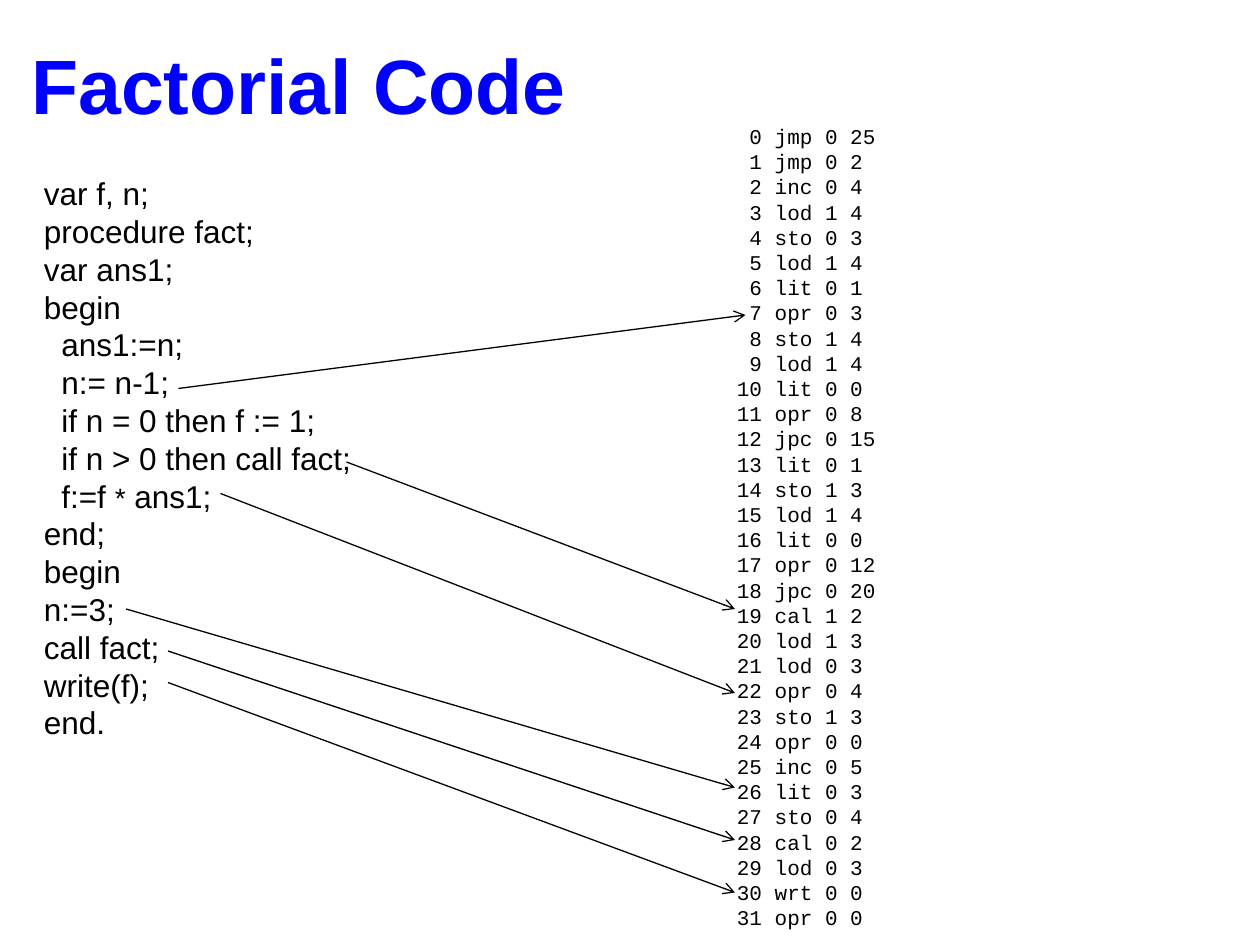
from dataclasses import dataclass

from lxml.etree import SubElement
from pptx import Presentation
from pptx.dml.color import RGBColor
from pptx.enum.shapes import MSO_CONNECTOR
from pptx.enum.text import MSO_AUTO_SIZE
from pptx.oxml.ns import qn
from pptx.slide import Slide
from pptx.util import Pt

COLORS = {"title": "0000FF", "ink": "000000", "background": "FFFFFF"}
INDENT = 10
STAR_SIZE = 16

PROGRAM = """var f, n;
procedure fact;
var ans1;
begin
  ans1:=n;
  n:= n-1;
  if n = 0 then f := 1;
  if n > 0 then call fact;
  f:=f * ans1;
end;
begin
n:=3;
call fact;
write(f);
end."""

INSTRUCTIONS = (
    "jmp 0 25", "jmp 0 2", "inc 0 4", "lod 1 4", "sto 0 3", "lod 1 4", "lit 0 1", "opr 0 3",
    "sto 1 4", "lod 1 4", "lit 0 0", "opr 0 8", "jpc 0 15", "lit 0 1", "sto 1 3", "lod 1 4",
    "lit 0 0", "opr 0 12", "jpc 0 20", "cal 1 2", "lod 1 3", "lod 0 3", "opr 0 4", "sto 1 3",
    "opr 0 0", "inc 0 5", "lit 0 3", "sto 0 4", "cal 0 2", "lod 0 3", "wrt 0 0", "opr 0 0",
)


@dataclass(frozen=True)
class Passage:
    lines: list[str]
    left: float
    top: float
    width: float
    height: float
    size: float
    font: str = "Arial"
    color: str = "ink"
    bold: bool = False
    wrap: bool = False


@dataclass(frozen=True)
class Translation:
    statement_x: float
    statement_y: float
    instruction_x: float
    instruction_y: float


PASSAGES = (
    Passage(PROGRAM.splitlines(), 18, 96, 190, 331, 18),
    Passage(["Factorial Code"], 10.8, 18, 344, 60.5, 44, color="title", bold=True),
    Passage([f"{address:>2} {operation}" for address, operation in enumerate(INSTRUCTIONS)],
            414, 67, 181.5, 473, 12, font="Courier New", wrap=True),
)

TRANSLATIONS = (
    Translation(96, 390, 420, 510),
    Translation(96, 372, 420, 480),
    Translation(72, 348, 420, 450),
    Translation(126, 282, 420, 396),
    Translation(102, 222, 426, 180),
    Translation(198, 264, 420, 348),
)


def draw_passage(slide: Slide, passage: Passage) -> None:
    """Write the lines of a passage, indenting those that start with two spaces."""
    frame = slide.shapes.add_textbox(
        Pt(passage.left), Pt(passage.top), Pt(passage.width), Pt(passage.height)).text_frame
    frame.word_wrap = passage.wrap
    frame.auto_size = MSO_AUTO_SIZE.SHAPE_TO_FIT_TEXT
    for number, line in enumerate(passage.lines):
        paragraph = frame.add_paragraph() if number else frame.paragraphs[0]
        indented = line.startswith("  ")
        before, star, after = (line.strip() if indented else line).partition("*")
        paragraph.text = before
        if indented:
            paragraph._p.get_or_add_pPr().set("marL", str(Pt(INDENT)))
        for part in filter(None, (star, after)):
            paragraph.add_run().text = part
        for run in paragraph.runs:
            run.font.name = passage.font
            run.font.size = Pt(STAR_SIZE if run.text == "*" else passage.size)
            run.font.bold = passage.bold
            run.font.color.rgb = RGBColor.from_string(COLORS[passage.color])


def draw_translation(slide: Slide, translation: Translation) -> None:
    """Draw an arrow from a statement to its instruction."""
    arrow = slide.shapes.add_connector(
        MSO_CONNECTOR.STRAIGHT,
        Pt(translation.statement_x), Pt(translation.statement_y),
        Pt(translation.instruction_x), Pt(translation.instruction_y))
    arrow.line.color.rgb = RGBColor.from_string(COLORS["ink"])
    arrow.line.width = Pt(0.75)
    SubElement(arrow.line._get_or_add_ln(), qn("a:tailEnd"), type="arrow")
    SubElement(arrow._element.spPr, qn("a:effectLst"))


def main() -> None:
    """Build the slide and save it."""
    presentation = Presentation()
    presentation.slide_width, presentation.slide_height = Pt(720), Pt(540)
    slide = presentation.slides.add_slide(presentation.slide_layouts[6])
    slide.background.fill.solid()
    slide.background.fill.fore_color.rgb = RGBColor.from_string(COLORS["background"])
    for passage in PASSAGES:
        draw_passage(slide, passage)
    for translation in TRANSLATIONS:
        draw_translation(slide, translation)
    presentation.save("out.pptx")


if __name__ == "__main__":
    main()
